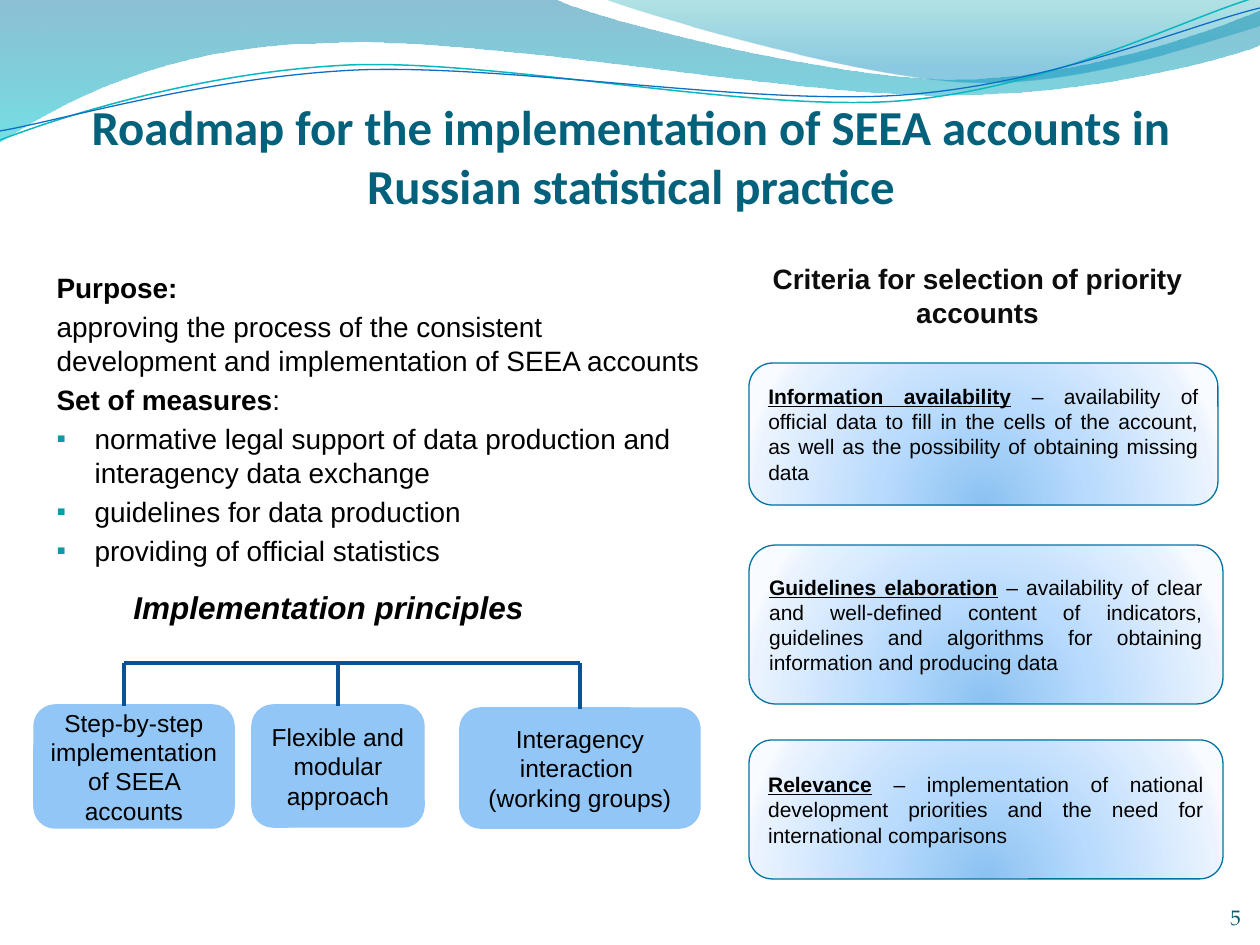
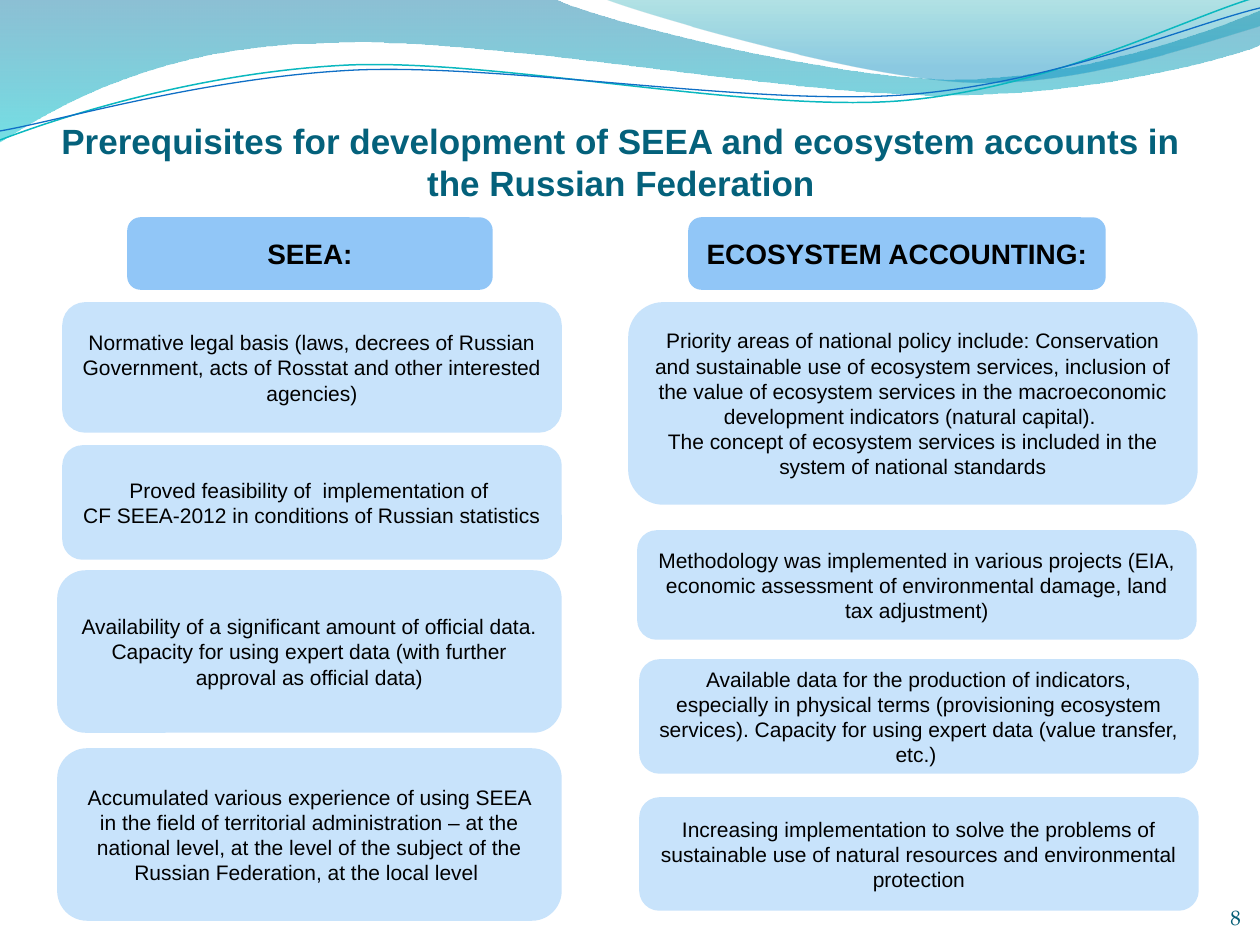
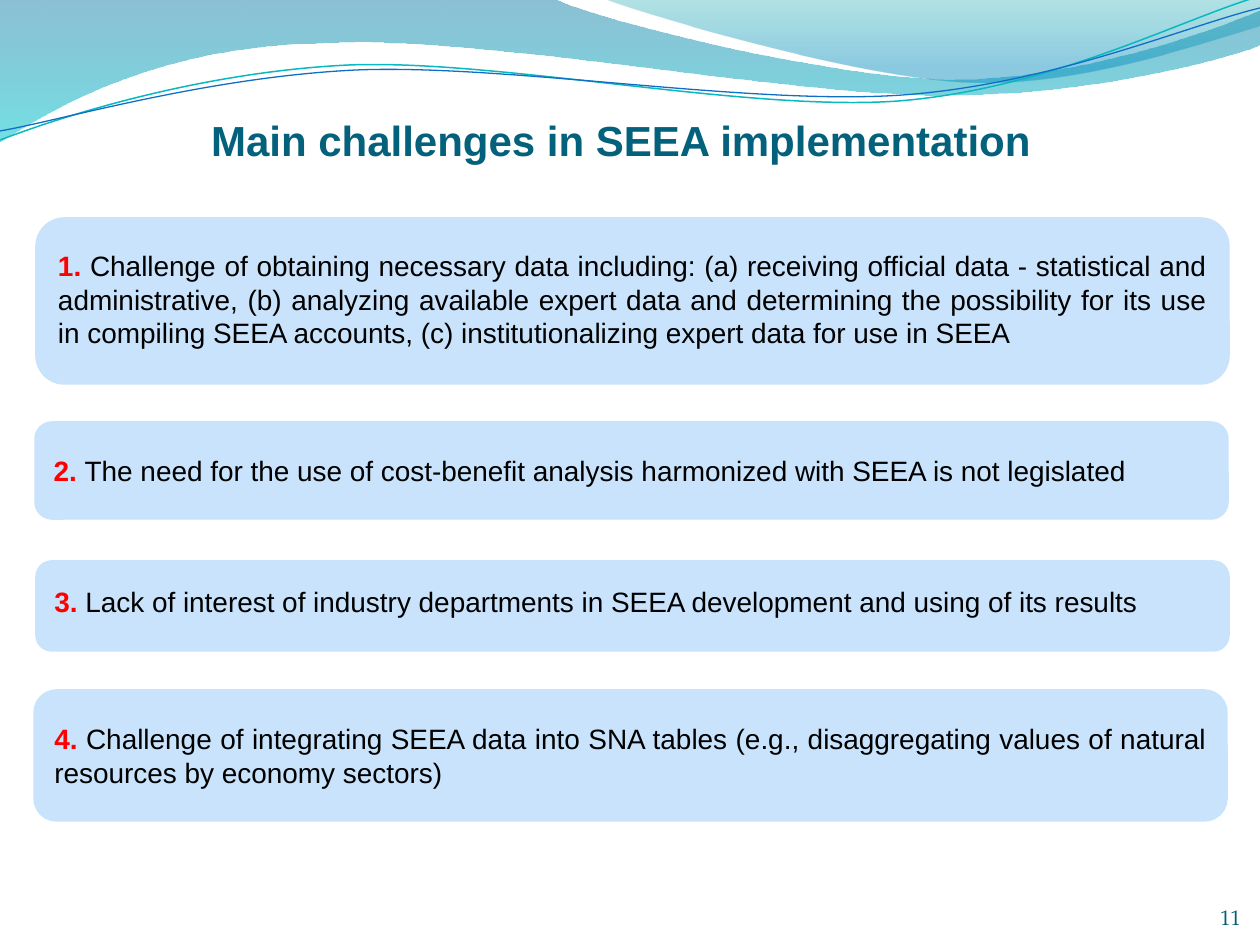
import dataclasses

import lxml.etree
import pptx
import pptx.dml.color
import pptx.enum.shapes
import pptx.enum.text
import pptx.oxml.ns
import pptx.util

ALIGN = pptx.enum.text.PP_ALIGN
ANCHOR = pptx.enum.text.MSO_ANCHOR
EMU_PER_PX = 914400 / 126


@dataclasses.dataclass(frozen=True)
class Theme:
    font: str = "Arial"
    title_font: str = "Calibri"
    number_font: str = "TeX Gyre Pagella"
    title: str = "04617B"
    text: str = "000000"
    label: str = "0D0D0D"
    number: str = "045D75"
    accent: str = "FF0000"
    bullet: str = "089CA3"
    strong_box: str = "91C6F7"
    light_box: str = "C8E3FB"
    outline: str = "0074A1"
    tree: str = "095295"
    small: int = 12
    medium: int = 14
    large: int = 16
    heading: int = 18


THEME = Theme()
BOLD = {"bold": True}
TERM = {"bold": True, "underline": True}
NUMBER = {"bold": True, "color": THEME.accent}

# (position %, colour, opacity %)
CRITERION_STOPS = [(0, "8BC2F1", 100), (43, "B9DBFD", 100),
                   (93, "EAF3FE", 100), (100, "F8FBFF", 100)]
BACK_WAVE_STOPS = [(0, "0074A1", 45), (100, "00C6CF", 55)]
FRONT_WAVE_STOPS = [(0, "00A1A9", 30), (80, "008BBF", 45)]

# First point, then lines (x, y) and curves (two control points, end point)
BACK_WAVE = [(0, 0), (554, -1), (600, 21, 837, 79, 955, 79),
             (1075, 79, 1207, 33, 1260, 11), (1261, 45),
             (1239, 55, 1096, 96, 940, 95), (781, 95, 481, 35, 324, 43),
             (163, 45, 58, 105, -1, 142)]
FRONT_WAVE = [(604, -1), (641, 14, 859, 78, 969, 82),
              (1079, 87, 1211, 40, 1260, 26), (1260, 0)]
TEAL_WAVE = [(0, 140), (60, 117, 199, 72, 349, 65),
             (498, 59, 747, 112, 898, 101), (1050, 89, 1182, 19, 1257, -3)]
BLUE_WAVE = [(0, 131), (59, 121, 207, 77, 357, 70),
             (508, 64, 752, 106, 903, 95), (1053, 84, 1186, 26, 1260, 8)]


def px(length):
    return pptx.util.Emu(round(length * EMU_PER_PX))


def rgb(color):
    return pptx.dml.color.RGBColor.from_string(color)


def set_attributes(target, values):
    for name, value in values.items():
        setattr(target, name, value)


def add_xml(parent, tag, **attributes):
    element = lxml.etree.SubElement(parent, pptx.oxml.ns.qn(tag))
    for name, value in attributes.items():
        element.set(name, str(value))
    return element


def fill_solid(shape, color):
    shape.fill.solid()
    shape.fill.fore_color.rgb = rgb(color)


def fill_gradient(shape, stops, radial=False):
    """Fill downwards, or outwards from below the bottom edge when radial."""
    shape.fill.gradient()
    gradient = shape.element.spPr.find(pptx.oxml.ns.qn("a:gradFill"))
    gradient.clear()
    stop_list = add_xml(gradient, "a:gsLst")
    for position, color, opacity in stops:
        stop = add_xml(stop_list, "a:gs", pos=position * 1000)
        stop_color = add_xml(stop, "a:srgbClr", val=color)
        if opacity < 100:
            add_xml(stop_color, "a:alpha", val=opacity * 1000)
    if radial:
        direction = add_xml(gradient, "a:path", path="circle")
        add_xml(direction, "a:fillToRect", l=50000, t=130000, r=50000, b=-30000)
    else:
        add_xml(gradient, "a:lin", ang=5400000, scaled=0)


def set_line(shape, color, width):
    shape.line.color.rgb = rgb(color)
    shape.line.width = pptx.util.Pt(width)


def bend_segments(shape, steps):
    """Turn the straight segments of a freeform into curves where a step has controls."""
    segments = list(shape.element.iter(pptx.oxml.ns.qn("a:lnTo")))
    for segment, step in zip(segments, steps[1:]):
        if len(step) == 2:
            continue
        segment.clear()
        segment.tag = pptx.oxml.ns.qn("a:cubicBezTo")
        for x, y in zip(step[::2], step[1::2]):
            add_xml(segment, "a:pt", x=px(x) - shape.left, y=px(y) - shape.top)


def add_wave(slide, steps, closed):
    points = [(px(step[-2]), px(step[-1])) for step in steps]
    builder = slide.shapes.build_freeform(*points[0], scale=1.0)
    builder.add_line_segments(points[1:], close=closed)
    shape = builder.convert_to_shape()
    bend_segments(shape, steps)
    shape.shadow.inherit = False
    return shape


def add_master_waves(presentation, slide):
    """Draw the waves on a slide, then move them to the master."""
    waves = []
    for steps, stops in ((BACK_WAVE, BACK_WAVE_STOPS), (FRONT_WAVE, FRONT_WAVE_STOPS)):
        wave = add_wave(slide, steps, closed=True)
        fill_gradient(wave, stops)
        wave.line.fill.background()
        waves.append(wave)
    for steps, color, width in ((TEAL_WAVE, "0AB8BF", 0.85), (BLUE_WAVE, "0F6FC6", 0.75)):
        wave = add_wave(slide, steps, closed=False)
        wave.fill.background()
        set_line(wave, color, width)
        waves.append(wave)
    for wave in waves:
        presentation.slide_master.shapes.element.append(wave.element)


def place(shape, box):
    set_attributes(shape, dict(zip(("left", "top", "width", "height"), map(px, box))))


def set_frame(frame, anchor, insets=None, wrap=True):
    """Insets are left, top, right and bottom."""
    set_attributes(frame, {
        "word_wrap": wrap, "vertical_anchor": anchor,
        "auto_size": pptx.enum.text.MSO_AUTO_SIZE.NONE})
    if insets:
        names = ("margin_left", "margin_top", "margin_right", "margin_bottom")
        set_attributes(frame, dict(zip(names, map(px, insets))))


def write_paragraph(paragraph, runs, size, align, **formats):
    """Runs are (text, formats) pairs or plain strings; a newline breaks the line."""
    paragraph.alignment = align
    for item in runs:
        if item == "\n":
            paragraph.add_line_break()
            continue
        text, own = (item, {}) if isinstance(item, str) else item
        values = {"name": THEME.font, "bold": False, "color": THEME.text,
                  "size": pptx.util.Pt(size), **formats, **own}
        run = paragraph.add_run()
        run.text = text
        run.font.color.rgb = rgb(values.pop("color"))
        set_attributes(run.font, values)


def write_text(frame, paragraphs, size, align, **formats):
    for index, runs in enumerate(paragraphs):
        paragraph = frame.add_paragraph() if index else frame.paragraphs[0]
        write_paragraph(paragraph, runs, size, align, **formats)


def add_title(slide, text, box, size, font=THEME.font):
    title = slide.shapes.title
    place(title, box)
    set_frame(title.text_frame, ANCHOR.BOTTOM, (0, 6, 0, 0))
    write_text(title.text_frame, [[text]], size, ALIGN.CENTER,
               name=font, bold=True, color=THEME.title)


def add_label(slide, text, box, size, align=ALIGN.CENTER, anchor=ANCHOR.BOTTOM,
              insets=(0, 0, 0, 0), wrap=True, **formats):
    label = slide.shapes.add_textbox(*map(px, box))
    set_frame(label.text_frame, anchor, insets, wrap)
    write_text(label.text_frame, [[text]], size, align, **formats)


def add_page_number(slide, number):
    add_label(slide, str(number), (1137, 880, 104, 50), THEME.small, ALIGN.RIGHT,
              name=THEME.number_font, color=THEME.number)


def add_box(slide, paragraphs, box, size, fill=THEME.light_box, align=ALIGN.CENTER,
            insets=None, **formats):
    shape = slide.shapes.add_shape(
        pptx.enum.shapes.MSO_SHAPE.ROUNDED_RECTANGLE, *map(px, box))
    shape.shadow.inherit = False
    fill_solid(shape, fill)
    set_line(shape, fill, 2)
    set_frame(shape.text_frame, ANCHOR.MIDDLE, insets)
    write_text(shape.text_frame, paragraphs, size, align, **formats)
    return shape


def add_criterion(slide, term, description, box):
    shape = add_box(slide, [[(term, TERM), f" – {description}"]], box,
                    THEME.small, align=ALIGN.JUSTIFY)
    fill_gradient(shape, CRITERION_STOPS, radial=True)
    set_line(shape, THEME.outline, 0.75)


def add_line(slide, start, end, target=None):
    """Draw a tree line; a target box is joined at the middle of its top."""
    connector = slide.shapes.add_connector(
        pptx.enum.shapes.MSO_CONNECTOR.STRAIGHT, *map(px, start + end))
    if target is not None:
        connector.end_connect(target, 0)
    set_line(connector, THEME.tree, 2.25)
    add_xml(connector.element.spPr, "a:effectLst")


def set_bullet(paragraph, bulleted):
    properties = paragraph._p.get_or_add_pPr()
    indent = px(38) if bulleted else 0
    properties.set("marL", str(indent))
    properties.set("indent", str(-indent))
    if bulleted:
        add_xml(add_xml(properties, "a:buClr"), "a:srgbClr", val=THEME.bullet)
        add_xml(properties, "a:buSzPct", val=95000)
        add_xml(properties, "a:buFont", typeface=THEME.font)
        add_xml(properties, "a:buChar", char="▪")
    else:
        add_xml(properties, "a:buNone")


def add_body(slide, items, box):
    """Fill the body placeholder with (runs, bulleted) items."""
    body = slide.placeholders[1]
    place(body, box)
    frame = body.text_frame
    set_frame(frame, ANCHOR.TOP)
    for index, (runs, bulleted) in enumerate(items):
        paragraph = frame.add_paragraph() if index else frame.paragraphs[0]
        set_bullet(paragraph, bulleted)
        paragraph.space_before = pptx.util.Pt(3.2 if index else 0)
        write_paragraph(paragraph, runs, THEME.large, ALIGN.LEFT)


def add_principles(slide):
    add_label(slide, "Implementation principles", (118, 582, 421, 50), THEME.heading,
              anchor=ANCHOR.TOP, insets=(13, 6, 13, 6), wrap=False,
              bold=True, italic=True)
    style = {"size": THEME.medium, "fill": THEME.strong_box}
    add_box(slide, [["Step-by-step implementation of SEEA accounts"]],
            (35, 706, 198, 121), insets=(5, 0, 5, 0), **style)
    flexible = add_box(slide, [["Flexible and modular approach"]],
                       (253, 706, 170, 120), **style)
    interagency = add_box(slide, [["Interagency interaction ", "\n", "(working groups)"]],
                          (461, 709, 238, 118), **style)
    add_line(slide, (124, 663), (580, 663))
    add_line(slide, (124, 663), (124, 706))
    add_line(slide, (338, 663), (338, 706), flexible)
    add_line(slide, (580, 663), (580, 709), interagency)


def build_roadmap(slide):
    add_title(slide, "Roadmap for the implementation of SEEA accounts in "
              "Russian statistical practice", (64, 125, 1134, 89), 27.9, THEME.title_font)
    add_body(slide, [
        ([("Purpose:", BOLD)], False),
        (["approving the process of the consistent development and "
          "implementation of SEEA accounts"], False),
        ([("Set of measures", BOLD), ":"], False),
        (["normative legal support of data production and interagency data exchange"], True),
        (["guidelines for data production"], True),
        (["providing of official statistics"], True),
    ], (44, 264, 677, 648))
    add_principles(slide)
    add_label(slide, "Criteria for selection of priority accounts",
              (749, 251, 457, 78), THEME.large, bold=True, color=THEME.label)
    for term, description, box in (
        ("Information availability",
         "availability of official data to fill in the cells of the account, "
         "as well as the possibility of obtaining missing data", (749, 363, 469, 142)),
        ("Guidelines elaboration",
         "availability of clear and well-defined content of indicators, guidelines "
         "and algorithms for obtaining information and producing data",
         (749, 545, 474, 159)),
        ("Relevance",
         "implementation of national development priorities and the need for "
         "international comparisons", (749, 740, 474, 139)),
    ):
        add_criterion(slide, term, description, box)


def build_prerequisites(slide):
    add_title(slide, "Prerequisites for development of SEEA and ecosystem accounts in "
              "the Russian Federation", (54, 46, 1134, 158), 20)
    for heading, box in (("SEEA:", (129, 219, 362, 69)),
                         ("ECOSYSTEM ACCOUNTING:", (690, 219, 414, 69))):
        add_box(slide, [[heading]], box, THEME.large, THEME.strong_box, bold=True)
    for box, *paragraphs in (
        ((64, 304, 496, 127),
         ["Normative legal basis (laws, decrees of Russian Government, acts of Rosstat "
          "and other interested agencies)"]),
        ((64, 447, 496, 111),
         ["Proved feasibility of  implementation of ", "\n",
          "CF SEEA-2012 in conditions of Russian statistics"]),
        ((59, 572, 501, 159),
         ["Availability of a significant amount of official data. Capacity for using "
          "expert data (with further approval as official data)"]),
        ((59, 750, 501, 169),
         ["Accumulated various experience of using SEEA in the field of territorial "
          "administration – at the national level, at the level of the subject of the "
          "Russian Federation, at the local level "]),
        ((630, 304, 566, 199),
         ["Priority areas of national policy include: Conservation and sustainable use "
          "of ecosystem services, inclusion of the value of ecosystem services in the "
          "macroeconomic development indicators (natural capital). "],
         ["The concept of ecosystem services is included in the system of national "
          "standards"]),
        ((639, 532, 556, 106),
         ["Methodology was implemented in various projects (EIA, economic assessment of "
          "environmental damage, land tax adjustment)"]),
        ((641, 661, 556, 111),
         ["Available data for the production of indicators, especially in physical terms "
          "(provisioning ecosystem services). Capacity for using expert data (value "
          "transfer, etc.) "]),
        ((641, 799, 556, 110),
         ["Increasing implementation to solve the problems of sustainable use of natural "
          "resources and environmental protection"]),
    ):
        add_box(slide, paragraphs, box, THEME.small)


def build_challenges(slide):
    add_title(slide, "Main challenges in SEEA implementation", (54, 86, 1134, 79), 24)
    challenges = (
        ((37, 219, 1191, 164), 10, ALIGN.JUSTIFY,
         "Challenge of obtaining necessary data including: (a) receiving official data - "
         "statistical and administrative, (b) analyzing available expert data and "
         "determining the possibility for its use in compiling SEEA accounts, "
         "(c) institutionalizing expert data for use in SEEA"),
        ((36, 423, 1191, 95), 6, ALIGN.LEFT,
         "The need for the use of cost-benefit analysis harmonized with SEEA is not "
         "legislated"),
        ((37, 562, 1191, 88), 16, ALIGN.JUSTIFY,
         "Lack of interest of industry departments in SEEA development and using of its "
         "results"),
        ((35, 691, 1191, 129), 6, ALIGN.JUSTIFY,
         "Challenge of integrating SEEA data into SNA tables (e.g., disaggregating "
         "values of natural resources by economy sectors)"),
    )
    for number, (box, bottom, align, text) in enumerate(challenges, start=1):
        add_box(slide, [[(f"{number}. ", NUMBER), text]], box, THEME.large,
                align=align, insets=(13, 6, 13, bottom))


def main():
    presentation = pptx.Presentation()
    presentation.slide_width, presentation.slide_height = px(1260), px(945)
    for layout_index, number, build in ((1, 5, build_roadmap),
                                        (5, 8, build_prerequisites),
                                        (5, 11, build_challenges)):
        slide = presentation.slides.add_slide(presentation.slide_layouts[layout_index])
        if build is build_roadmap:
            add_master_waves(presentation, slide)
        build(slide)
        add_page_number(slide, number)
    presentation.save("out.pptx")


if __name__ == "__main__":
    main()
